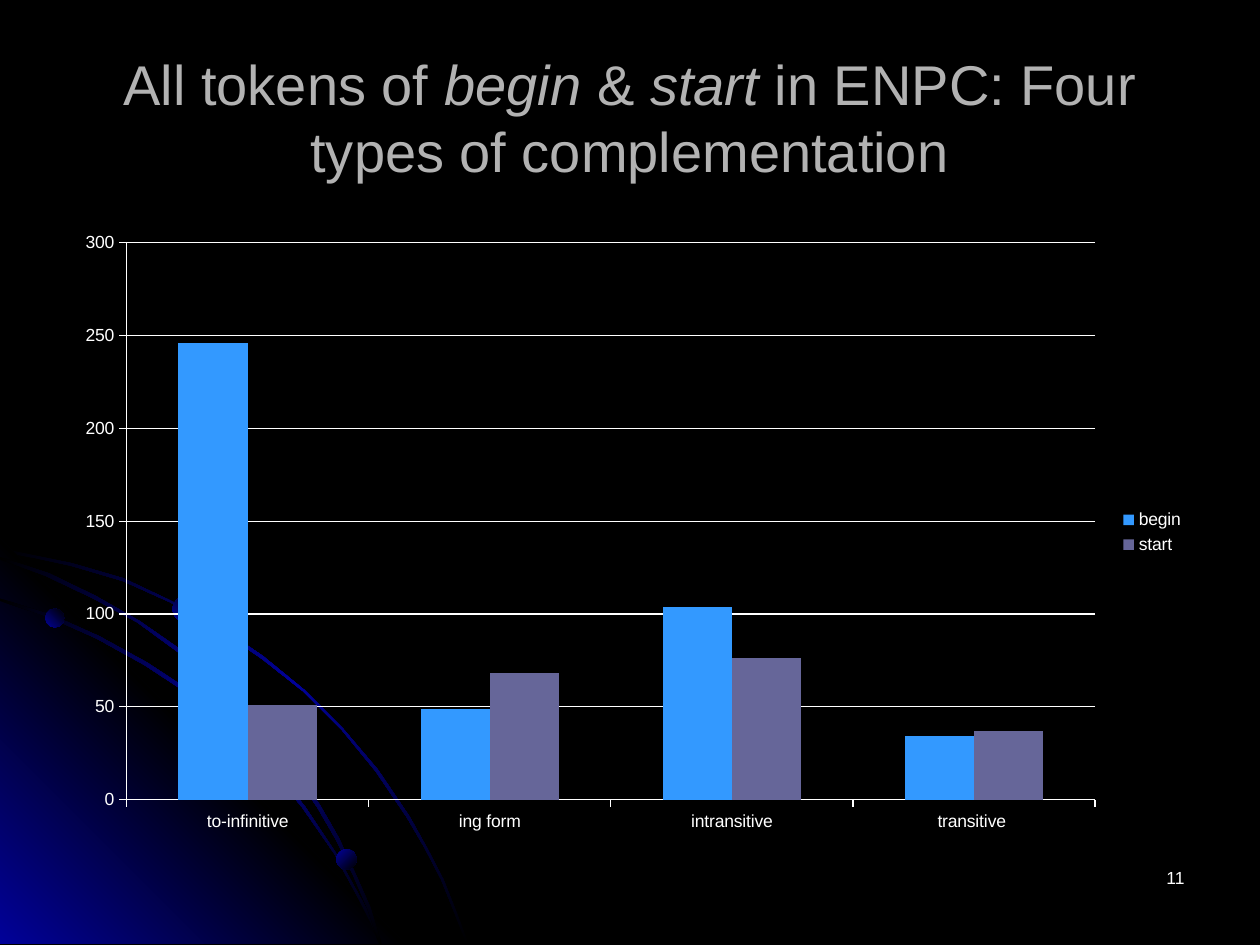
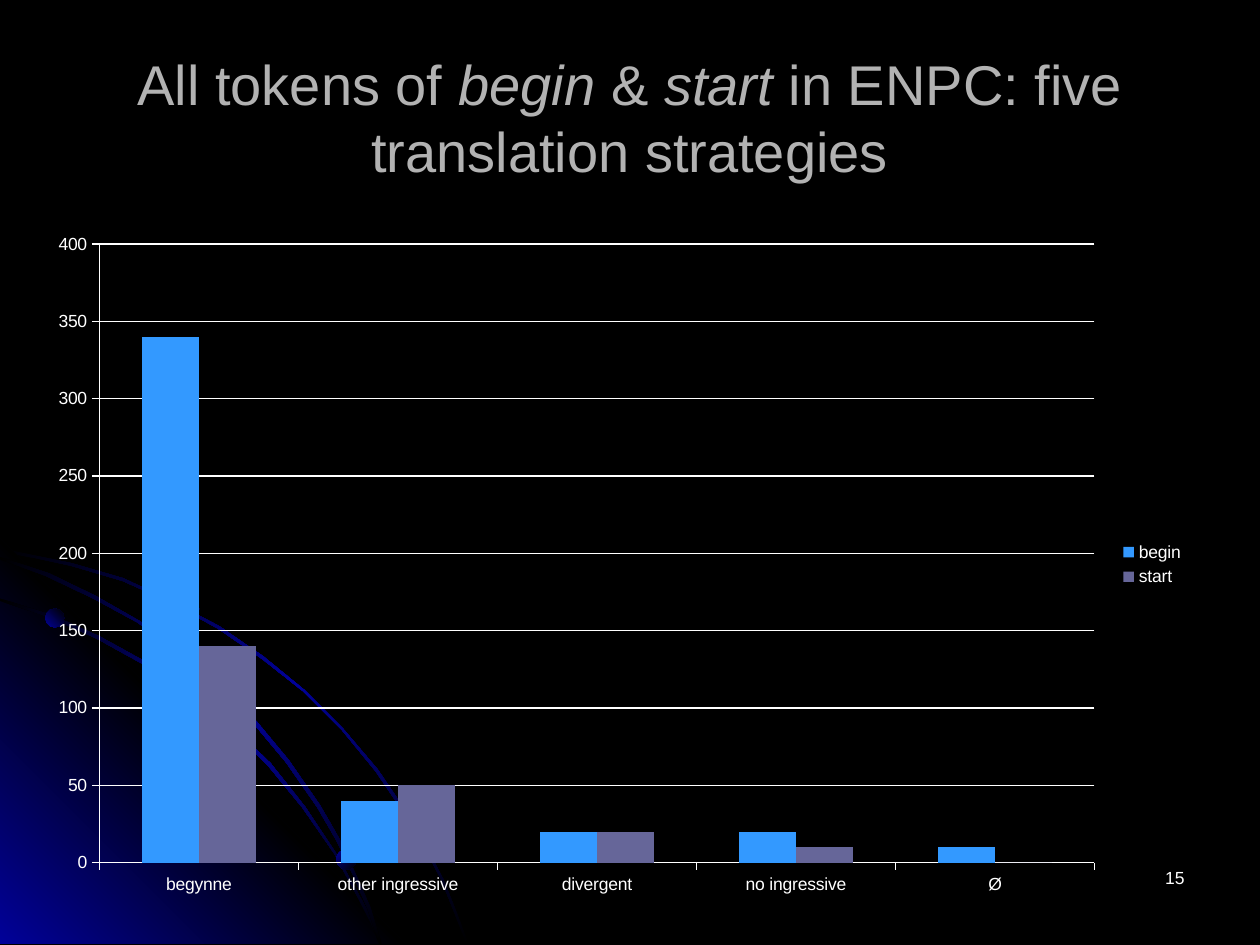
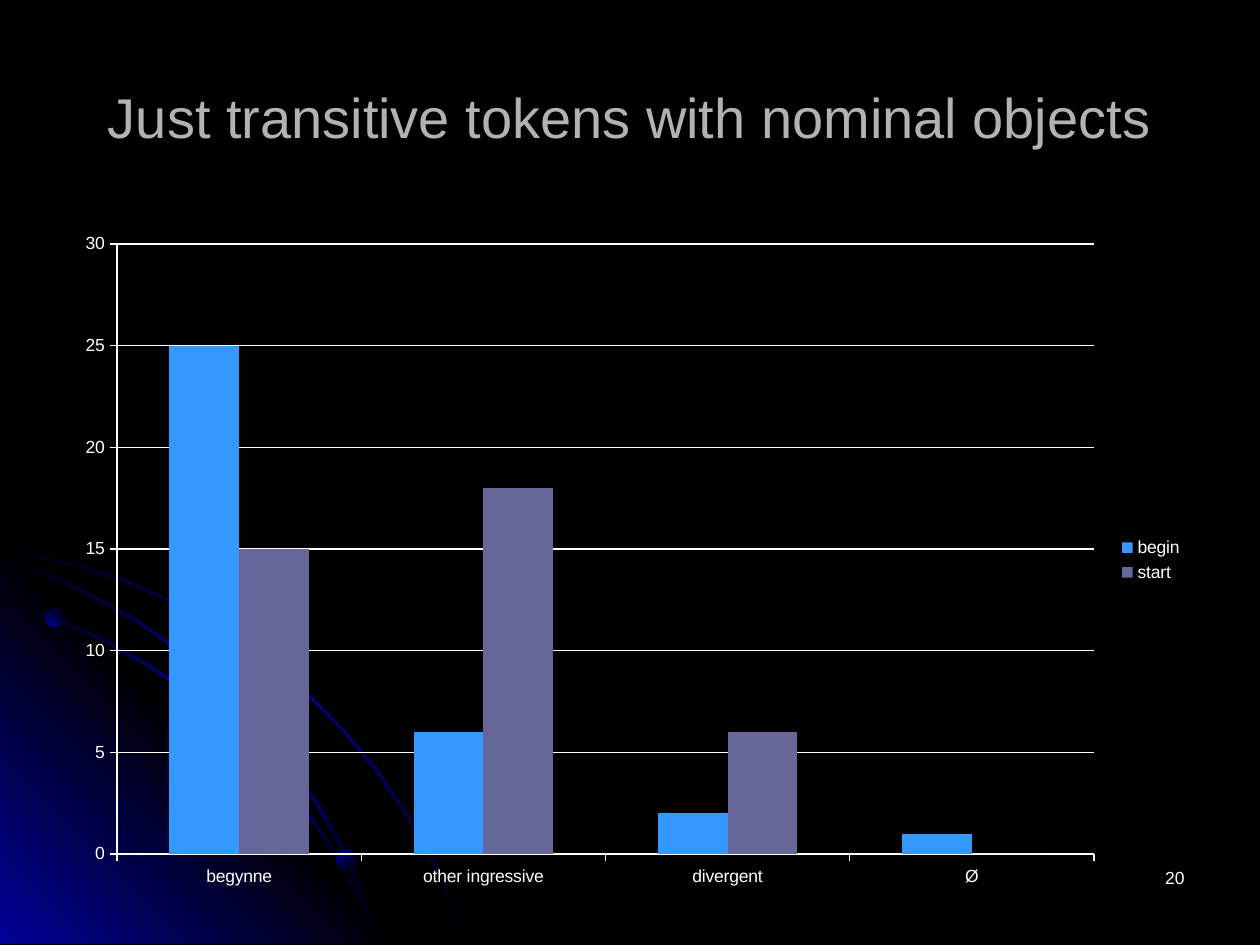
from lxml import etree
from pptx import Presentation
from pptx.chart.data import CategoryChartData
from pptx.dml.color import RGBColor
from pptx.enum.chart import XL_CHART_TYPE, XL_LEGEND_POSITION, XL_TICK_MARK
from pptx.enum.shapes import MSO_SHAPE
from pptx.enum.text import MSO_ANCHOR, PP_ALIGN
from pptx.oxml.ns import qn
from pptx.util import Inches, Pt

COLUMNS = XL_CHART_TYPE.COLUMN_CLUSTERED
LEGEND_RIGHT = XL_LEGEND_POSITION.RIGHT
TICK_OUTSIDE = XL_TICK_MARK.OUTSIDE
ELLIPSE = MSO_SHAPE.OVAL
TOP, MIDDLE = MSO_ANCHOR.TOP, MSO_ANCHOR.MIDDLE
CENTER, RIGHT = PP_ALIGN.CENTER, PP_ALIGN.RIGHT

FONT = "Arial"
BLACK, NAVY, GREY, WHITE = "000000", "010199", "B2B2B2", "FFFFFF"
SERIES_COLORS = ["3399FF", "666699"]

ARC_FADE = [BLACK, NAVY, BLACK]
GLOW_FADE = [NAVY, BLACK, NAVY]
DOT_FADE = [NAVY, BLACK]
DOWN_RIGHT, UP_RIGHT = 315, 45

OUTER_ARC = [
    (57, 447), (28, 441), (0, 435), (0, 438), (28, 443), (56, 449), (97, 461),
    (135, 478), (173, 499), (208, 523), (241, 549), (271, 579), (298, 612),
    (323, 649), (337, 673), (350, 698), (360, 723), (370, 749), (372, 749),
    (362, 723), (352, 698), (339, 673), (325, 648), (300, 611), (272, 578),
    (242, 548), (209, 521), (174, 497), (136, 477), (98, 459),
]
CORNER_GLOW = [(322, 749), (0, 749), (0, 427)]
INNER_ARC = [
    (285, 714), (294, 732), (301, 749), (303, 749), (296, 730), (286, 712),
    (266, 676), (242, 640), (215, 606), (184, 576), (152, 549), (117, 526),
    (79, 505), (41, 488), (0, 475), (0, 477), (39, 490), (77, 507), (115, 528),
    (150, 551), (183, 578), (213, 608), (240, 641), (265, 677),
]
MIDDLE_ARC = [
    (0, 442), (0, 444), (36, 457), (74, 475), (109, 494), (142, 518),
    (173, 544), (202, 575), (227, 605), (252, 641), (267, 667), (280, 694),
    (292, 722), (301, 749), (303, 749), (294, 720), (282, 693), (269, 665),
    (254, 639), (229, 603), (204, 573), (175, 543), (144, 516), (111, 493),
    (76, 473), (39, 455),
]
SWEEPS = [
    (OUTER_ARC, ARC_FADE, DOWN_RIGHT),
    (CORNER_GLOW, GLOW_FADE, UP_RIGHT),
    (INNER_ARC, ARC_FADE, DOWN_RIGHT),
    (MIDDLE_ARC, ARC_FADE, DOWN_RIGHT),
]
DOTS = [
    (0.36, 4.83, 0.15, UP_RIGHT),
    (2.67, 6.74, 0.16, DOWN_RIGHT),
    (1.37, 4.73, 0.21, UP_RIGHT),
]

SLIDES = [
    {
        "title": ["All tokens of ", "begin", " & ", "start",
                  " in ENPC: Four types of complementation"],
        "number": "11",
        "box": (0.5, 1.75, 9, 4.95),
        "categories": ["to-infinitive", "ing form", "intransitive", "transitive "],
        "series": {"begin": [246, 49, 104, 34], "start ": [51, 68, 76, 37]},
    },
    {
        "title": ["All tokens of ", "begin", " & ", "start",
                  " in ENPC: five translation strategies"],
        "number": "15",
        "box": (0.28, 1.75, 9.22, 5.46),
        "categories": ["begynne", "other ingressive", "divergent",
                       "no ingressive", "Ø"],
        "series": {"begin": [340, 40, 20, 20, 10], "start": [140, 50, 20, 10, 0]},
    },
    {
        "title": ["Just transitive tokens with nominal objects"],
        "number": "20",
        "box": (0.5, 1.75, 8.99, 5.39),
        "categories": ["begynne", "other ingressive", "divergent", "Ø"],
        "series": {"begin": [25, 6, 2, 1], "start": [15, 18, 6, 0]},
    },
]


def rgb(color):
    return RGBColor.from_string(color)


class Deck:
    def __init__(self):
        self.prs = Presentation()
        self.prs.slide_width, self.prs.slide_height = Inches(10), Inches(7.5)
        backdrop = self.prs.slide_master.background.fill
        backdrop.solid()
        backdrop.fore_color.rgb = rgb(BLACK)
        self.slide = None

    def new_slide(self):
        self.slide = self.prs.slides.add_slide(self.prs.slide_layouts[6])
        for outline, colors, angle in SWEEPS:
            self.sweep(outline, colors, angle)
        for left, top, size, angle in DOTS:
            self.dot(left, top, size, angle)

    def fade(self, shape, colors, angle):
        shape.shadow.inherit = False
        shape.line.fill.background()
        shape.fill.gradient()
        shape.fill.gradient_angle = angle
        stops = shape._element.spPr.find(qn("a:gradFill")).find(qn("a:gsLst"))
        for stop in list(stops):
            stops.remove(stop)
        for index, color in enumerate(colors):
            position = 100000 * index // (len(colors) - 1)
            stop = etree.SubElement(stops, qn("a:gs"), pos=str(position))
            etree.SubElement(stop, qn("a:srgbClr"), val=color)

    def sweep(self, outline, colors, angle):
        builder = self.slide.shapes.build_freeform(*outline[0], scale=Inches(0.01))
        builder.add_line_segments(outline[1:], close=True)
        self.fade(builder.convert_to_shape(), colors, angle)

    def dot(self, left, top, size, angle):
        ellipse = self.slide.shapes.add_shape(
            ELLIPSE, Inches(left), Inches(top), Inches(size), Inches(size))
        self.fade(ellipse, DOT_FADE, angle)

    def text(self, box, parts, size, color, align, anchor):
        frame = self.slide.shapes.add_textbox(*map(Inches, box)).text_frame
        frame.word_wrap = True
        frame.vertical_anchor = anchor
        paragraph = frame.paragraphs[0]
        paragraph.alignment = align
        for index, part in enumerate(parts):
            run = paragraph.add_run()
            run.text = part
            run.font.name, run.font.size = FONT, Pt(size)
            run.font.italic = index % 2 == 1
            run.font.color.rgb = rgb(color)

    def title(self, parts):
        self.text((0.5, 0.3, 9, 1.25), parts, 32, GREY, CENTER, MIDDLE)

    def page_number(self, number):
        self.text((7.17, 6.83, 2.33, 0.5), [number], 10, WHITE, RIGHT, TOP)

    def white_line(self, line):
        line.color.rgb = rgb(WHITE)
        line.width = Pt(0.75)

    def column_chart(self, box, categories, series):
        data = CategoryChartData()
        data.categories = categories
        for name, counts in series.items():
            data.add_series(name, counts)
        chart = self.slide.shapes.add_chart(COLUMNS, *map(Inches, box), data).chart
        chart.has_title = False
        chart.font.name, chart.font.size = FONT, Pt(10)
        chart.font.color.rgb = rgb(WHITE)
        chart.has_legend = True
        chart.legend.position = LEGEND_RIGHT
        chart.legend.include_in_layout = False
        for axis in (chart.category_axis, chart.value_axis):
            axis.major_tick_mark = TICK_OUTSIDE
            self.white_line(axis.format.line)
        chart.value_axis.has_major_gridlines = True
        self.white_line(chart.value_axis.major_gridlines.format.line)
        plot = chart.plots[0]
        plot.vary_by_categories = False
        plot.gap_width, plot.overlap = 150, 0
        for columns, color in zip(plot.series, SERIES_COLORS):
            columns.format.fill.solid()
            columns.format.fill.fore_color.rgb = rgb(color)


def main():
    deck = Deck()
    for content in SLIDES:
        deck.new_slide()
        deck.title(content["title"])
        deck.page_number(content["number"])
        deck.column_chart(content["box"], content["categories"], content["series"])
    deck.prs.save("out.pptx")


if __name__ == "__main__":
    main()
